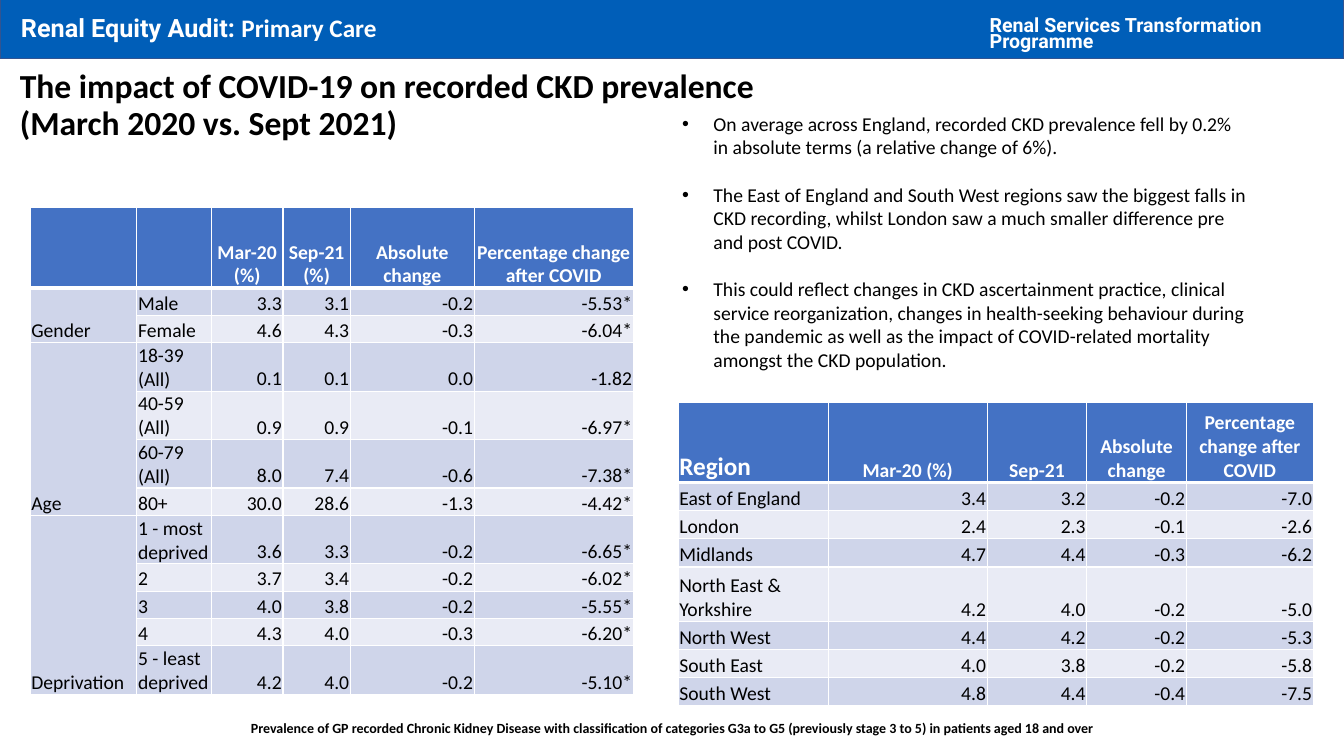
from lxml.etree import SubElement
from pptx import Presentation
from pptx.dml.color import RGBColor
from pptx.enum.shapes import MSO_SHAPE
from pptx.enum.text import MSO_ANCHOR, PP_ALIGN
from pptx.oxml.ns import qn
from pptx.util import Cm, Pt

COLORS = {
    "banner": "005EB8", "banner_line": "325491", "header": "4472C4",
    "band_dark": "CFD5EA", "band_light": "E9EBF5", "white": "FFFFFF", "black": "000000",
}

GROUP_HEADER = ["", "", "Mar-20\n(%)", "Sep-21\n(%)", "Absolute change", "Percentage change after COVID"]
GROUP_ROWS = [
    ["Gender", "Male", "3.3", "3.1", "-0.2", "-5.53*"],
    ["", "Female", "4.6", "4.3", "-0.3", "-6.04*"],
    ["Age", "18-39 (All)", "0.1", "0.1", "0.0", "-1.82"],
    ["", "40-59 (All)", "0.9", "0.9", "-0.1", "-6.97*"],
    ["", "60-79 (All)", "8.0", "7.4", "-0.6", "-7.38*"],
    ["", "80+", "30.0", "28.6", "-1.3", "-4.42*"],
    ["Deprivation", "1 - most deprived", "3.6", "3.3", "-0.2", "-6.65*"],
    ["", "2", "3.7", "3.4", "-0.2", "-6.02*"],
    ["", "3", "4.0", "3.8", "-0.2", "-5.55*"],
    ["", "4", "4.3", "4.0", "-0.3", "-6.20*"],
    ["", "5 - least deprived", "4.2", "4.0", "-0.2", "-5.10*"],
]
REGION_HEADER = ["Region", "Mar-20 (%)", "Sep-21", "Absolute change", "Percentage change after COVID"]
REGION_ROWS = [
    ["East of England", "3.4", "3.2", "-0.2", "-7.0"],
    ["London", "2.4", "2.3", "-0.1", "-2.6"],
    ["Midlands", "4.7", "4.4", "-0.3", "-6.2"],
    ["North East & Yorkshire", "4.2", "4.0", "-0.2", "-5.0"],
    ["North West", "4.4", "4.2", "-0.2", "-5.3"],
    ["South East", "4.0", "3.8", "-0.2", "-5.8"],
    ["South West", "4.8", "4.4", "-0.4", "-7.5"],
]
FINDINGS = [
    "On average across England, recorded CKD prevalence fell by 0.2% in absolute terms (a relative change of 6%).",
    "The East of England and South West regions saw the biggest falls in CKD recording, whilst London saw "
    "a much smaller difference pre and post COVID.",
    "This could reflect changes in CKD ascertainment practice, clinical service reorganization, changes in "
    "health-seeking behaviour during the pandemic as well as the impact of COVID-related mortality amongst "
    "the CKD population.",
]
FOOTNOTE = ("Prevalence of GP recorded Chronic Kidney Disease with classification of categories G3a to G5 "
            "(previously stage 3 to 5) in patients aged 18 and over")


class AuditSlide:
    """Draws the audit's banner, text and tables on one slide."""

    def __init__(self, slide):
        self.slide = slide

    def color(self, name):
        return RGBColor.from_string(COLORS[name])

    def style(self, font, size, color="black", bold=False, name="Calibri"):
        font.name, font.size, font.bold = name, Pt(size), bold
        font.color.rgb = self.color(color)

    def banner(self, left, top, width, height):
        shape = self.slide.shapes.add_shape(
            MSO_SHAPE.RECTANGLE, Cm(left), Cm(top), Cm(width), Cm(height))
        shape.shadow.inherit = False
        shape.fill.solid()
        shape.fill.fore_color.rgb = self.color("banner")
        shape.line.color.rgb = self.color("banner_line")
        shape.line.width = Pt(1)

    def text(self, left, top, width, height, lines, size, anchor=MSO_ANCHOR.TOP, **style):
        box = self.slide.shapes.add_textbox(Cm(left), Cm(top), Cm(width), Cm(height))
        frame = box.text_frame
        frame.word_wrap = True
        frame.vertical_anchor = anchor
        frame.text = "\n".join(lines)
        for paragraph in frame.paragraphs:
            self.style(paragraph.font, size, **style)
        return frame.paragraphs

    def bullets(self, left, top, width, height, lines, size):
        for index, paragraph in enumerate(self.text(left, top, width, height, lines, size)):
            properties = paragraph._p.get_or_add_pPr()
            properties.set("marL", str(Cm(0.79)))
            properties.set("indent", str(-Cm(0.79)))
            bullet_font = properties.makeelement(qn("a:buFont"), {"typeface": "Arial"})
            bullet = properties.makeelement(qn("a:buChar"), {"char": "•"})
            properties.insert(0, bullet_font)
            properties.insert(1, bullet)
            if index:
                paragraph.space_before = Pt(17)

    def cell(self, cell, text, size, align, fill=None, bottom=1, **style):
        cell.text = text
        cell.vertical_anchor = MSO_ANCHOR.BOTTOM
        cell.margin_left = cell.margin_right = cell.margin_top = Cm(0.03)
        cell.margin_bottom = 0
        for paragraph in cell.text_frame.paragraphs:
            paragraph.alignment = align
            self.style(paragraph.font, size, **style)
        properties = cell._tc.get_or_add_tcPr()
        for side, points in zip(("lnL", "lnR", "lnT", "lnB"), (1, 1, 1, bottom)):
            line = SubElement(properties, qn(f"a:{side}"), w=str(Pt(points)))
            SubElement(SubElement(line, qn("a:solidFill")), qn("a:srgbClr"), val=COLORS["white"])
        if fill:
            cell.fill.solid()
            cell.fill.fore_color.rgb = self.color(fill)
        else:
            cell.fill.background()

    def grid(self, left, top, widths, heights):
        frame = self.slide.shapes.add_table(
            len(heights), len(widths), Cm(left), Cm(top), Cm(sum(widths)), Cm(sum(heights)))
        table = frame.table
        table.first_row = table.horz_banding = False
        for column, width in zip(table.columns, widths):
            column.width = Cm(width)
        for row, height in zip(table.rows, heights):
            row.height = Cm(height)
        return table

    def data_table(self, left, top, widths, heights, header, rows, labels, corner_size=14):
        table = self.grid(left, top, widths, heights)
        for column, text in enumerate(header):
            corner = column == 0
            self.cell(table.cell(0, column), text, corner_size if corner else 14,
                      PP_ALIGN.LEFT if corner else PP_ALIGN.CENTER,
                      "header", bottom=3, color="white", bold=True)
        for row, values in enumerate(rows, 1):
            fill = "band_dark" if row % 2 else "band_light"
            for column, text in enumerate(values):
                align = PP_ALIGN.LEFT if column < labels else PP_ALIGN.RIGHT
                self.cell(table.cell(row, column), text, 14, align, fill)
        return table

    def footnote(self, left, top, width, height, text):
        table = self.grid(left, top, [width], [height])
        self.cell(table.cell(0, 0), text, 10, PP_ALIGN.CENTER, bold=True)


def main():
    presentation = Presentation()
    presentation.slide_width, presentation.slide_height = Cm(33.87), Cm(19.05)
    audit = AuditSlide(presentation.slides.add_slide(presentation.slide_layouts[6]))

    audit.banner(0, -0.05, 33.87, 1.53)
    programme = audit.text(24.69, 0.36, 9.1, 0.71, ["Renal Services Transformation Programme"], 14,
                           color="white", bold=True, name="Roboto")
    programme[0].line_spacing = Pt(12)
    title = audit.text(0.25, 1.57, 29.21, 2.21,
                       ["The impact of COVID-19 on recorded CKD prevalence\v(March 2020 vs. Sept 2021)"],
                       24, anchor=MSO_ANCHOR.MIDDLE, bold=True)
    title[0].line_spacing = 0.9
    audit.footnote(1.55, 17.91, 30.76, 0.66, FOOTNOTE)

    section = audit.text(0.28, 0.18, 20.29, 1.8, [""], 18)[0]
    for text, name in (("Renal Equity Audit: ", "Roboto"), ("Primary Care", "Calibri")):
        run = section.add_run()
        run.text = text
        audit.style(run.font, 18, "white", True, name)

    group_heights = [2.03] + [1.22 if len(row[1]) > 6 else 0.69 for row in GROUP_ROWS]
    groups = audit.data_table(0.76, 5.23, [2.69, 1.88, 1.8, 1.7, 3.12, 4.01], group_heights,
                              GROUP_HEADER, GROUP_ROWS, labels=2)
    for first, last in ((1, 2), (3, 6), (7, 11)):
        groups.cell(first, 0).merge(groups.cell(last, 0))

    region_heights = [2.03] + [1.37 if len(row[0]) > 15 else 0.71 for row in REGION_ROWS]
    audit.data_table(17.09, 10.13, [3.78, 4.01, 2.51, 2.51, 3.2], region_heights,
                     REGION_HEADER, REGION_ROWS, labels=1, corner_size=18)
    audit.bullets(16.94, 2.69, 14.76, 7.44, FINDINGS, 14)

    presentation.save("out.pptx")


if __name__ == "__main__":
    main()
